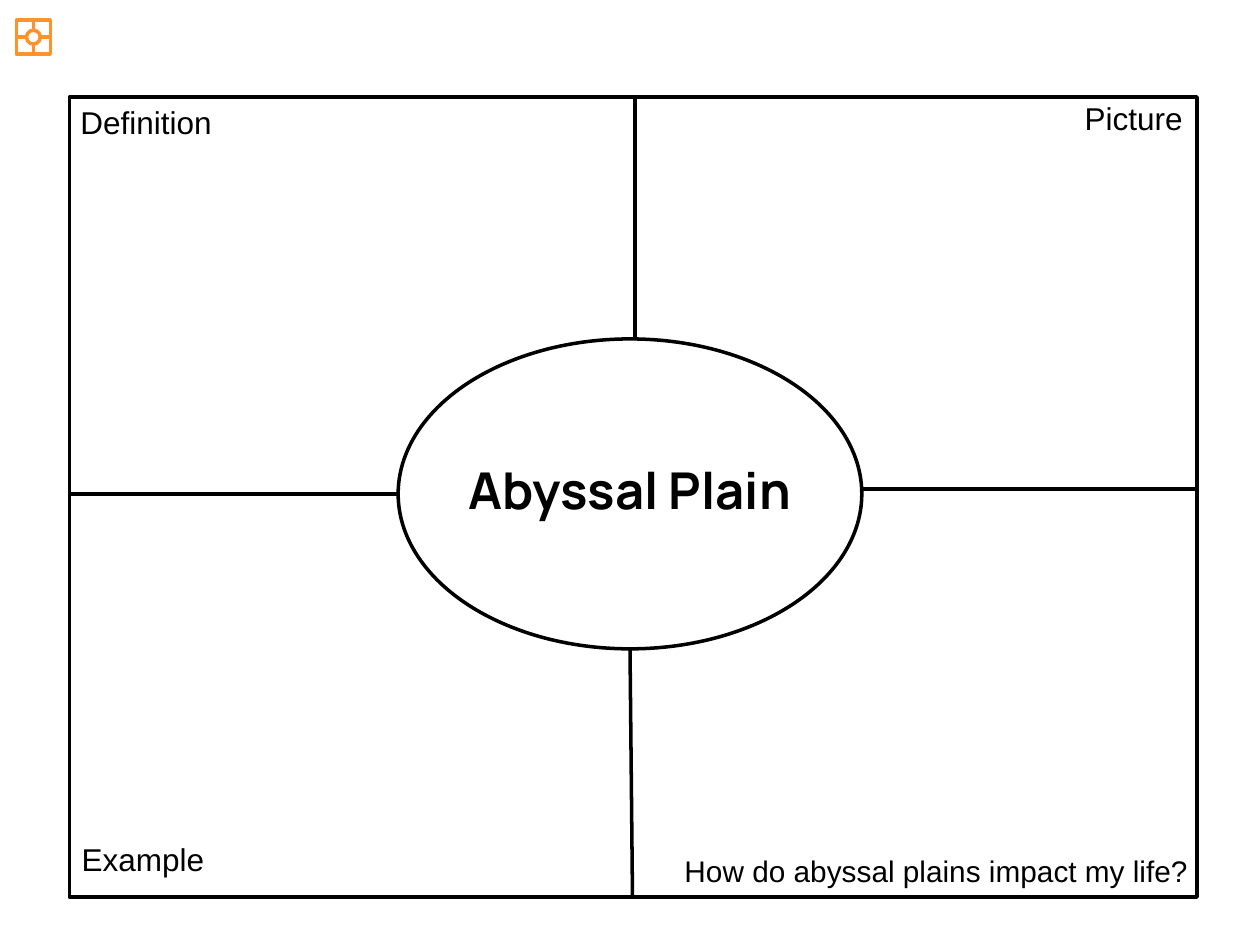
from dataclasses import dataclass

from lxml.etree import SubElement
from pptx import Presentation
from pptx.dml.color import RGBColor
from pptx.enum.shapes import MSO_CONNECTOR, MSO_SHAPE
from pptx.enum.text import MSO_ANCHOR, MSO_AUTO_SIZE, PP_ALIGN
from pptx.oxml.ns import qn
from pptx.util import Inches, Pt

# The slide is a grid of square cells
COLUMNS, ROWS = 100, 75
CELL = 0.1


@dataclass(frozen=True)
class Theme:
    ink: RGBColor = RGBColor(0x00, 0x00, 0x00)
    paper: RGBColor = RGBColor(0xFF, 0xFF, 0xFF)
    accent: RGBColor = RGBColor(0xFF, 0x93, 0x2B)
    title_font: str = "Manrope"
    label_font: str = "Arial"
    title_size: int = 29
    label_size: int = 18
    question_size: int = 17
    stroke: int = 2


THEME = Theme()


def cells(*counts):
    """Turn counts of grid cells into lengths."""
    return [Inches(count * CELL) for count in counts]


def set_line(line, color):
    line.color.rgb = color
    line.width = Pt(THEME.stroke)


def add_outline(page, kind, place, color, fill=None):
    shape = page.shapes.add_shape(kind, *cells(*place))
    shape.shadow.inherit = False
    if fill is None:
        shape.fill.background()
    else:
        shape.fill.solid()
        shape.fill.fore_color.rgb = fill
    set_line(shape.line, color)


def add_spoke(page, start, end, color):
    spoke = page.shapes.add_connector(MSO_CONNECTOR.STRAIGHT, *cells(*start, *end))
    set_line(spoke.line, color)
    SubElement(spoke._element.spPr, qn("a:effectLst"))


def add_four_square(page, frame, oval, spokes, color):
    """Draw a frame cut into four by spokes that meet at an oval."""
    add_outline(page, MSO_SHAPE.RECTANGLE, frame, color)
    for start, end in spokes:
        add_spoke(page, start, end, color)
    add_outline(page, MSO_SHAPE.OVAL, oval, color, THEME.paper)


def write(box, text, align, **font_values):
    frame = box.text_frame
    frame_values = {
        "word_wrap": True,
        "auto_size": MSO_AUTO_SIZE.NONE,
        "vertical_anchor": MSO_ANCHOR.TOP,
        "margin_left": Inches(0.1),
        "margin_right": Inches(0.1 if align != PP_ALIGN.LEFT else 0),
        "margin_top": Inches(0.05),
        "margin_bottom": Inches(0.05),
    }
    for name, value in frame_values.items():
        setattr(frame, name, value)
    para = frame.paragraphs[0]
    para.alignment = align
    span = para.add_run()
    span.text = text
    span.font.color.rgb = THEME.ink
    for name, value in font_values.items():
        setattr(span.font, name, value)


def add_label(page, text, place, size=THEME.label_size, align=PP_ALIGN.LEFT):
    box = page.shapes.add_textbox(*cells(*place))
    write(box, text, align, name=THEME.label_font, size=Pt(size))


def set_title(page, text, place):
    title = page.shapes.title
    for name, value in zip(("left", "top", "width", "height"), cells(*place)):
        setattr(title, name, value)
    write(title, text, PP_ALIGN.CENTER,
          name=THEME.title_font, size=Pt(THEME.title_size), bold=True)
    # Bring the title in front of the oval
    title.element.getparent().append(title.element)


def main():
    deck = Presentation()
    deck.slide_width, deck.slide_height = cells(COLUMNS, ROWS)
    page = deck.slides.add_slide(deck.slide_layouts[5])

    # Vocabulary organizer
    add_four_square(
        page, (5.5, 7.7, 89.5, 63.5), (31.6, 26.9, 36.8, 24.6),
        [((50.4, 7.7), (50.4, 26.9)), ((50, 51.5), (50.2, 71.1)),
         ((5.5, 39.2), (31.6, 39.2)), ((68.4, 38.8), (95, 38.8))],
        THEME.ink)
    set_title(page, "Abyssal Plain", (32.7, 35.9, 34.6, 5.9))

    # Corner labels
    add_label(page, "Definition", (5.4, 7.7, 12.5, 4))
    add_label(page, "Example", (5.5, 66.2, 11.8, 4))
    add_label(page, "Picture", (85.1, 7.4, 9.9, 4))
    add_label(page, "How do abyssal plains impact my life?", (46, 67.2, 49.3, 3.9),
              THEME.question_size, PP_ALIGN.RIGHT)

    # Small organizer icon
    add_four_square(
        page, (1.3, 1.6, 2.7, 2.7), (2.1, 2.4, 1.1, 1.1),
        [((2.65, 1.6), (2.65, 2.4)), ((2.65, 3.5), (2.65, 4.3)),
         ((1.3, 2.95), (2.1, 2.95)), ((3.2, 2.95), (4, 2.95))],
        THEME.accent)

    deck.save("out.pptx")


if __name__ == "__main__":
    main()
